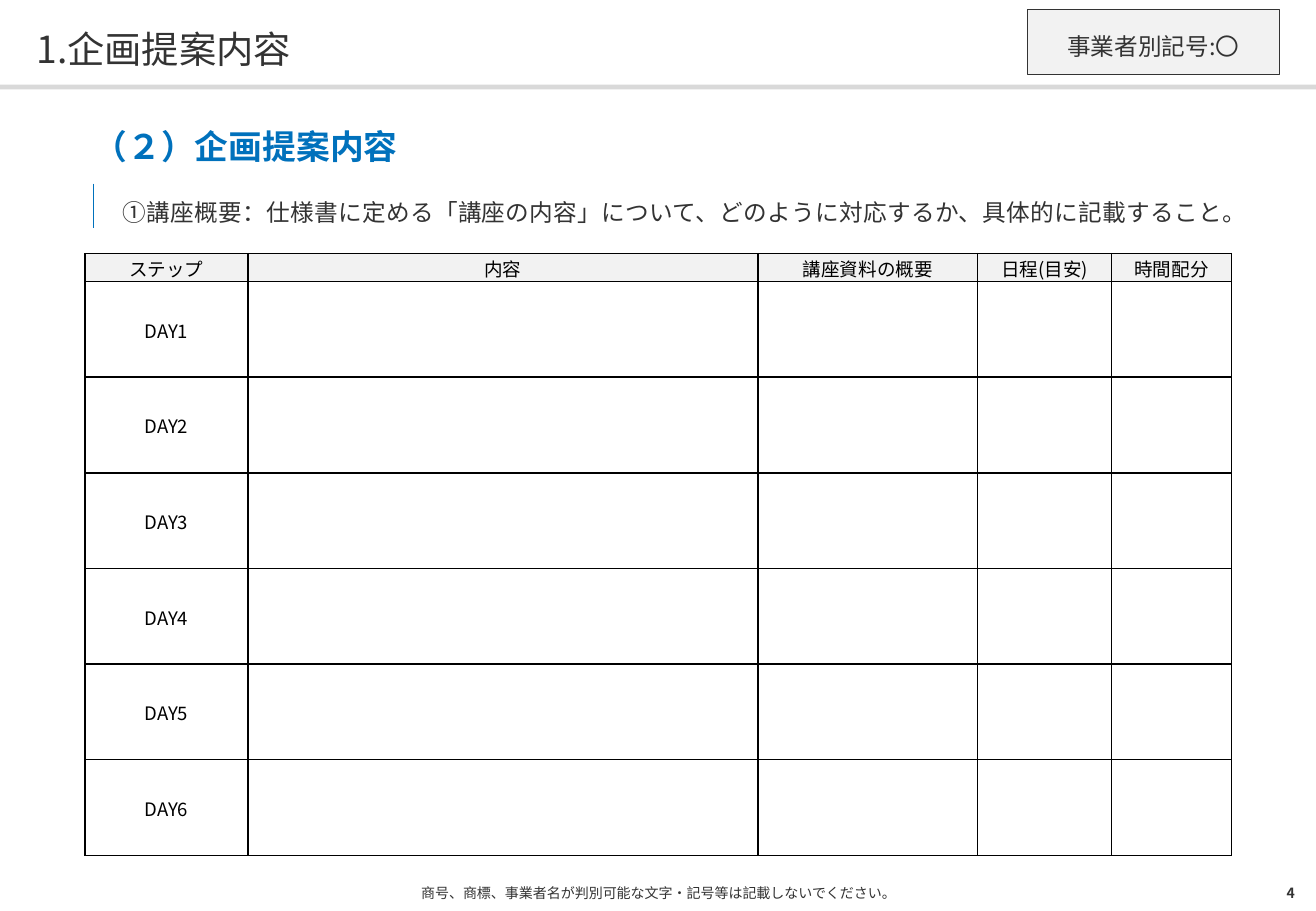
from lxml.etree import SubElement
from pptx import Presentation
from pptx.dml.color import RGBColor
from pptx.enum.shapes import MSO_SHAPE
from pptx.enum.text import MSO_ANCHOR, PP_ALIGN
from pptx.oxml.ns import qn
from pptx.util import Pt

FONT = "Noto Sans CJK JP"
INK, BLACK, BLUE = "333333", "000000", "0071BC"
RULE_GRAY, PALE_GRAY = "D9D9D9", "F2F2F2"
NO_STYLE = "{2D5ABB26-0587-4C30-8999-92F81FD0307C}"


def color(value):
    return RGBColor.from_string(value)


class SlideBuilder:
    def __init__(self, page):
        self.page = page

    def style(self, paragraph, text, size, ink=INK, bold=False,
              align=PP_ALIGN.LEFT, spacing=1.0):
        paragraph.add_run().text = text
        paragraph.alignment = align
        paragraph.line_spacing = spacing
        font = paragraph.font
        font.size, font.bold, font.name = Pt(size), bold, FONT
        font.color.rgb = color(ink)
        defaults = paragraph._p.pPr.find(qn("a:defRPr"))
        SubElement(defaults, qn("a:ea"), typeface=FONT)

    def margins(self, holder, left=0, top=0, right=0, bottom=0):
        holder.margin_left, holder.margin_top = Pt(left), Pt(top)
        holder.margin_right, holder.margin_bottom = Pt(right), Pt(bottom)

    def text(self, left, top, width, height, text, size, **style):
        box = self.page.shapes.add_textbox(
            Pt(left), Pt(top), Pt(width), Pt(height))
        frame = box.text_frame
        frame.word_wrap = True
        frame.vertical_anchor = MSO_ANCHOR.MIDDLE
        self.margins(frame)
        self.style(frame.paragraphs[0], text, size, **style)

    def rectangle(self, left, top, width, height, fill, line=None):
        shape = self.page.shapes.add_shape(
            MSO_SHAPE.RECTANGLE, Pt(left), Pt(top), Pt(width), Pt(height))
        shape.shadow.inherit = False
        shape.fill.solid()
        shape.fill.fore_color.rgb = color(fill)
        if line:
            shape.line.color.rgb = color(line)
            shape.line.width = Pt(0.5)
        else:
            shape.line.fill.background()
        return shape

    def label(self, left, top, width, height, text, size, **style):
        frame = self.rectangle(left, top, width, height, PALE_GRAY, INK).text_frame
        frame.word_wrap = True
        frame.vertical_anchor = MSO_ANCHOR.MIDDLE
        self.margins(frame, 20, 11.5, 20, 8.6)
        self.style(frame.paragraphs[0], text, size, **style)

    def table(self, left, top, columns, rows):
        frame = self.page.shapes.add_table(
            len(rows), len(columns), Pt(left), Pt(top),
            Pt(sum(columns)), Pt(sum(rows)))
        table = frame.table
        table.first_row = table.horz_banding = False
        table._tbl.tblPr.find(qn("a:tableStyleId")).text = NO_STYLE
        for column, width in zip(table.columns, columns):
            column.width = Pt(width)
        for row, height in zip(table.rows, rows):
            row.height = Pt(height)
        for cell in table.iter_cells():
            cell.fill.background()
            self.margins(cell)
        return table

    def borders(self, cell, sides, ink, width):
        properties = cell._tc.get_or_add_tcPr()
        for index, side in enumerate(sides):
            line = properties.makeelement(qn(f"a:ln{side}"), w=str(Pt(width)))
            fill = SubElement(line, qn("a:solidFill"))
            SubElement(fill, qn("a:srgbClr"), val=ink)
            properties.insert(index, line)

    def section(self, heading, instruction):
        table = self.table(55.4, 68.4, [669.6], [40.5, 26.5])
        upper, lower = table.iter_cells()
        self.margins(upper, bottom=8.6)
        self.style(upper.text_frame.paragraphs[0], heading, 20,
                   ink=BLUE, bold=True, spacing=1.1)
        self.margins(lower, left=17.3)
        paragraph = lower.text_frame.paragraphs[0]
        self.style(paragraph, instruction, 14,
                   align=PP_ALIGN.JUSTIFY, spacing=1.3)
        paragraph.space_after = Pt(12)
        self.borders(lower, "L", BLUE, 0.5)

    def schedule(self, headers, steps):
        table = self.table(50.4, 150.3, [96.5, 302.4, 130.3, 79.2, 71.3],
                           [16.6] + [56.7] * len(steps))
        for cell in table.iter_cells():
            self.margins(cell, 0.7, 0.7, 0.7)
            cell.vertical_anchor = MSO_ANCHOR.MIDDLE
            self.borders(cell, "LRTB", BLACK, 1)
        header_cells = list(table.rows[0].cells)
        for cell in header_cells:
            cell.fill.solid()
            cell.fill.fore_color.rgb = color(PALE_GRAY)
        step_cells = [table.cell(row, 0) for row in range(1, len(steps) + 1)]
        for cell, text in zip(header_cells + step_cells, headers + steps):
            self.style(cell.text_frame.paragraphs[0], text, 11,
                       ink=BLACK, align=PP_ALIGN.CENTER)


def main():
    deck = Presentation()
    deck.slide_width, deck.slide_height = Pt(780), Pt(540)
    page = deck.slides.add_slide(deck.slide_layouts[6])
    builder = SlideBuilder(page)
    builder.rectangle(0, 50.2, 780, 2.9, RULE_GRAY)
    builder.text(21.6, 12.2, 737.3, 31, "1.企画提案内容", 22.1, spacing=1.1)
    builder.section(
        "（２）企画提案内容",
        "①講座概要：仕様書に定める「講座の内容」について、どのように対応するか、具体的に記載すること。")
    builder.schedule(
        ["ステップ", "内容", "講座資料の概要", "日程(目安)", "時間配分"],
        [f"DAY{day}" for day in range(1, 7)])
    builder.text(64.1, 519.1, 652.3, 20.9,
                 "商号、商標、事業者名が判別可能な文字・記号等は記載しないでください。",
                 8.3, align=PP_ALIGN.CENTER)
    builder.label(609.1, 5.4, 149, 38.9, "事業者別記号:〇", 14,
                  align=PP_ALIGN.CENTER, spacing=1.1)
    builder.text(730.1, 519.1, 37.4, 20.2, "4", 8.3,
                 bold=True, align=PP_ALIGN.RIGHT)
    deck.save("out.pptx")


if __name__ == "__main__":
    main()
